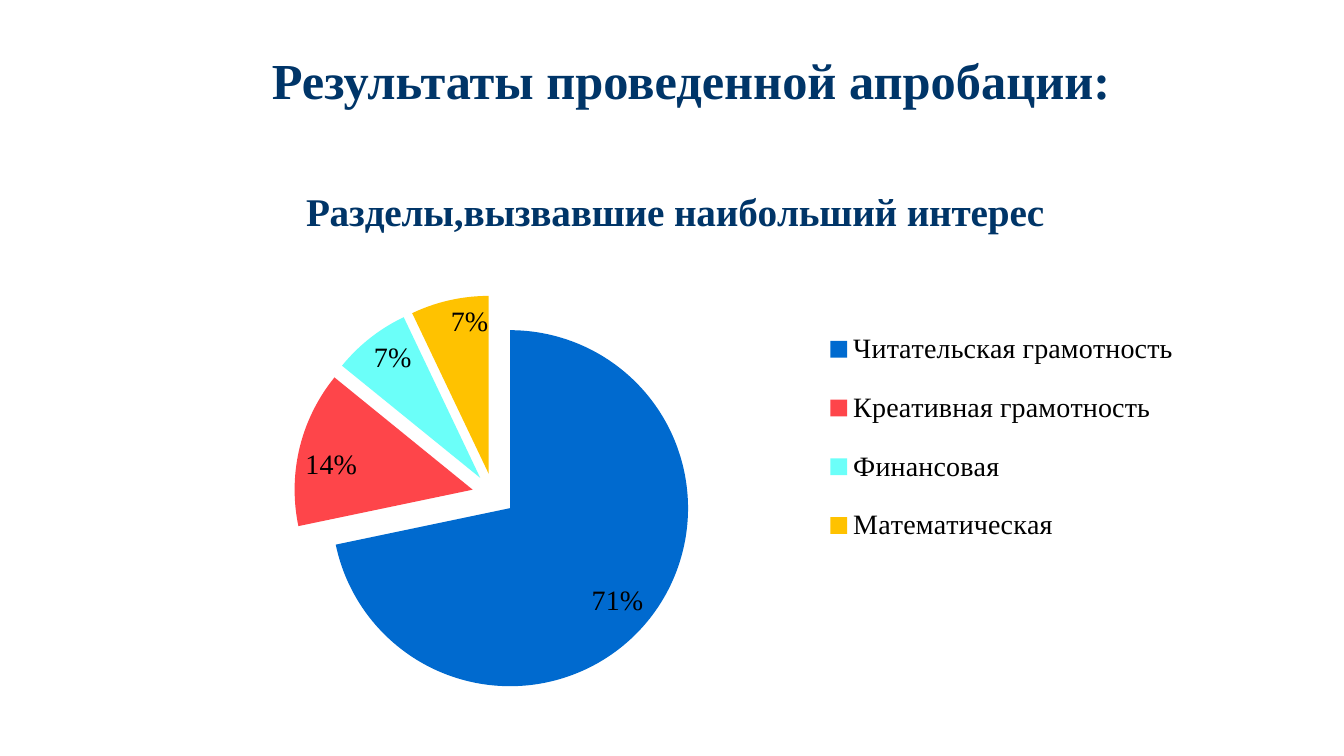
import pptx
import pptx.chart.data
import pptx.dml.color
import pptx.enum.chart
import pptx.enum.text
import pptx.oxml.ns
import pptx.oxml.xmlchemy
import pptx.util
from pptx.util import Inches

NAVY = pptx.dml.color.RGBColor(0x00, 0x35, 0x68)
BLACK = pptx.dml.color.RGBColor(0x00, 0x00, 0x00)
BLUE = pptx.dml.color.RGBColor(0x00, 0x6A, 0xCF)
RED = pptx.dml.color.RGBColor(0xFE, 0x45, 0x4A)
CYAN = pptx.dml.color.RGBColor(0x6B, 0xFF, 0xF9)
AMBER = pptx.dml.color.RGBColor(0xFF, 0xC2, 0x00)

SERIF = "Times New Roman"
SECTIONS = [
    ("Читательская грамотность", 0.71, BLUE),
    ("Креативная грамотность", 0.14, RED),
    ("Финансовая", 0.07, CYAN),
    ("Математическая", 0.07, AMBER),
]


def style_font(font, size, color, bold=False):
    font.name = SERIF
    font.size = pptx.util.Pt(size)
    font.color.rgb = color
    font.bold = bold


def add_heading(slide, text, left, top, width, height):
    text_frame = slide.shapes.add_textbox(left, top, width, height).text_frame
    text_frame.word_wrap = True
    text_frame.vertical_anchor = pptx.enum.text.MSO_ANCHOR.MIDDLE
    text_frame.text = text
    paragraph = text_frame.paragraphs[0]
    paragraph.alignment = pptx.enum.text.PP_ALIGN.CENTER
    paragraph.line_spacing = 0.9
    style_font(paragraph.runs[0].font, 36, NAVY, bold=True)


def make_element(tag, value=None):
    element = pptx.oxml.xmlchemy.OxmlElement(tag)
    if value is not None:
        element.set("val", str(value))
    return element


def set_layout(parent, following, left, top, width, height, inner=False):
    """Place a chart part by fractions of the chart; its layout precedes `following`."""
    for old_layout in parent.findall(pptx.oxml.ns.qn("c:layout")):
        parent.remove(old_layout)
    layout = make_element("c:layout")
    manual = make_element("c:manualLayout")
    layout.append(manual)
    if inner:
        manual.append(make_element("c:layoutTarget", "inner"))
    for mode in ("c:xMode", "c:yMode"):
        manual.append(make_element(mode, "edge"))
    for tag, value in zip(("c:x", "c:y", "c:w", "c:h"), (left, top, width, height)):
        manual.append(make_element(tag, value))
    parent.find(pptx.oxml.ns.qn(following)).addprevious(layout)


def add_chart_title(chart, text):
    chart.has_title = True
    text_frame = chart.chart_title.text_frame
    text_frame.text = text
    style_font(text_frame.paragraphs[0].runs[0].font, 28, NAVY, bold=True)


def add_legend(chart):
    chart.has_legend = True
    legend = chart.legend
    legend.position = pptx.enum.chart.XL_LEGEND_POSITION.RIGHT
    legend.include_in_layout = False
    style_font(legend.font, 20, BLACK)
    set_layout(chart.element.xpath(".//c:legend")[0], "c:overlay", 0.64, 0.26, 0.35, 0.48)


def style_slices(chart, explosion):
    plot = chart.plots[0]
    plot.vary_by_categories = True
    for index, (_, _, color) in enumerate(SECTIONS):
        fill = plot.series[0].points[index].format.fill
        fill.solid()
        fill.fore_color.rgb = color
    first_point = chart.element.xpath(".//c:dPt")[0]
    first_point.addprevious(make_element("c:explosion", explosion))


def add_labels(plot):
    plot.has_data_labels = True
    labels = plot.data_labels
    labels.show_value = True
    labels.show_percentage = False
    labels.number_format = "0%"
    labels.number_format_is_linked = False
    labels.position = pptx.enum.chart.XL_LABEL_POSITION.INSIDE_END
    style_font(labels.font, 20, BLACK)


def add_pie(slide, title, left, top, width, height):
    data = pptx.chart.data.CategoryChartData(number_format="0%")
    data.categories = [name for name, _, _ in SECTIONS]
    data.add_series("Series 1", [share for _, share, _ in SECTIONS])
    chart = slide.shapes.add_chart(
        pptx.enum.chart.XL_CHART_TYPE.PIE, left, top, width, height, data
    ).chart
    chart.font.name = "Calibri"
    chart.font.size = pptx.util.Pt(10)
    chart.font.color.rgb = BLACK
    add_chart_title(chart, title)
    add_legend(chart)
    style_slices(chart, explosion=12)
    add_labels(chart.plots[0])
    plot_area = chart.element.xpath(".//c:plotArea")[0]
    set_layout(plot_area, "c:pieChart", 0.13, 0.24, 0.39, 0.73, inner=True)


def main():
    presentation = pptx.Presentation()
    presentation.slide_width = Inches(13.33)
    presentation.slide_height = Inches(7.5)
    slide = presentation.slides.add_slide(presentation.slide_layouts[6])
    add_heading(slide, "Результаты проведенной апробации:",
                Inches(1.55), Inches(0.4), Inches(10.61), Inches(0.85))
    add_pie(slide, "Разделы,вызвавшие наибольший интерес",
            Inches(1.55), Inches(1.63), Inches(10.29), Inches(5.42))
    presentation.save("out.pptx")


if __name__ == "__main__":
    main()
